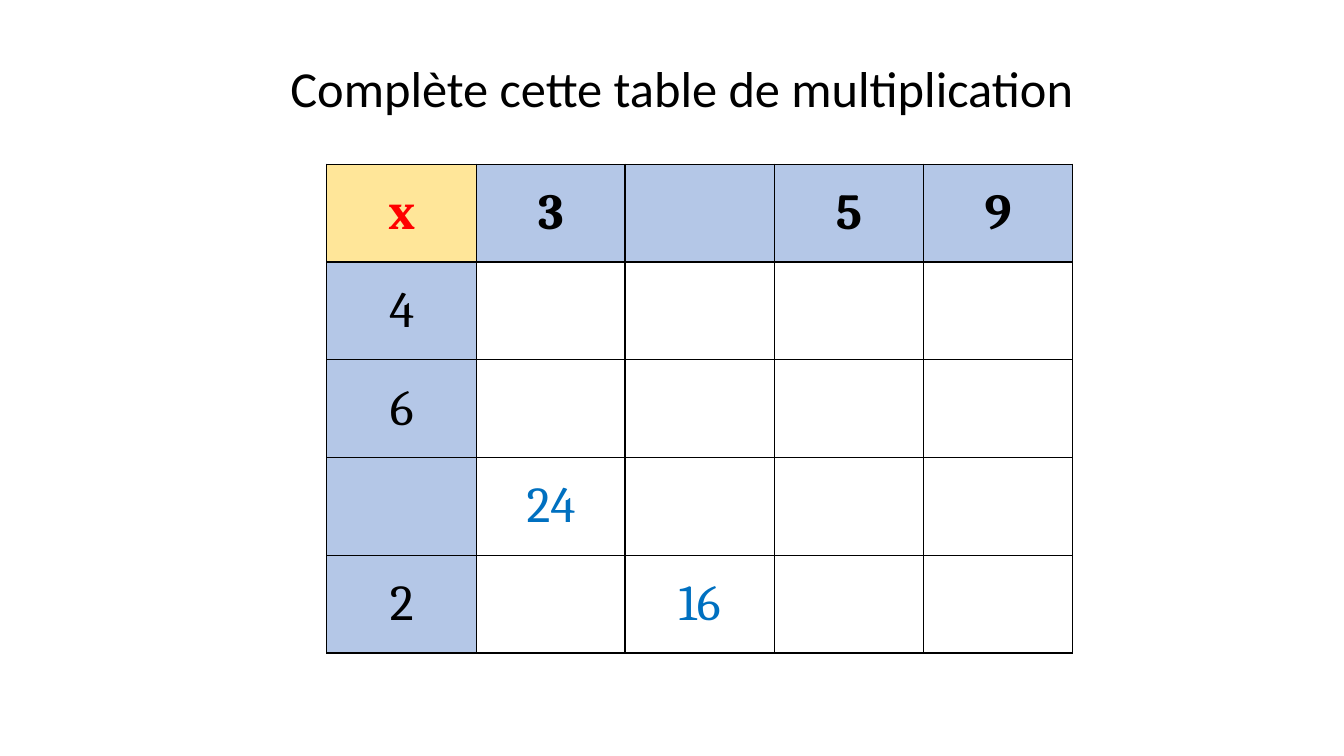
from lxml import etree
from pptx import Presentation
from pptx.dml.color import RGBColor
from pptx.enum import text
from pptx.oxml.ns import qn
from pptx.util import Inches, Pt

TITLE = "Complète cette table de multiplication"
GRID = [
    ["x", "3", "", "5", "9"],
    ["4", "", "", "", ""],
    ["6", "", "", "", ""],
    ["", "24", "", "", ""],
    ["2", "", "16", "", ""],
]
COLUMN_WIDTHS = [1.49, 1.47, 1.48, 1.48, 1.48]
ROW_HEIGHT = 0.97
BLACK, RED, BLUE = "000000", "FF0000", "0070C0"
CORNER_FILL, HEADER_FILL = "FFE699", "B4C7E7"


def rgb(value):
    return RGBColor.from_string(value)


def set_font(paragraph, name, color, bold=False):
    font = paragraph.font
    font.name, font.size, font.bold = name, Pt(36), bold
    font.color.rgb = rgb(color)


def add_borders(cell):
    properties = cell._tc.get_or_add_tcPr()
    for position, side in enumerate(("a:lnL", "a:lnR", "a:lnT", "a:lnB")):
        line = etree.Element(qn(side), w=str(Pt(1)))
        fill = etree.SubElement(line, qn("a:solidFill"))
        etree.SubElement(fill, qn("a:srgbClr"), val=BLACK)
        properties.insert(position, line)


def cell_style(row, column):
    """Return the fill (None for an answer cell) and the text colour."""
    if row == column == 0:
        return CORNER_FILL, RED
    if row == 0 or column == 0:
        return HEADER_FILL, BLACK
    return None, BLUE


prs = Presentation()
prs.slide_width, prs.slide_height = Inches(13.33), Inches(7.5)
slide = prs.slides.add_slide(prs.slide_layouts[5])

title = slide.shapes.title
title.left, title.top = Inches(2.78), Inches(0.52)
title.width, title.height = Inches(9.32), Inches(0.71)
title.text_frame.text = TITLE
title.text_frame.word_wrap = True
title.text_frame.auto_size = text.MSO_AUTO_SIZE.NONE
title.text_frame.vertical_anchor = text.MSO_ANCHOR.TOP
heading = title.text_frame.paragraphs[0]
heading.alignment = text.PP_ALIGN.LEFT
set_font(heading, "Calibri", BLACK)

table = slide.shapes.add_table(
    len(GRID), len(COLUMN_WIDTHS), Inches(3.24), Inches(1.63),
    Inches(sum(COLUMN_WIDTHS)), Inches(ROW_HEIGHT * len(GRID))).table
table.horz_banding = False
for column, width in zip(table.columns, COLUMN_WIDTHS):
    column.width = Inches(width)

for r, numbers in enumerate(GRID):
    table.rows[r].height = Inches(ROW_HEIGHT)
    for c, number in enumerate(numbers):
        cell = table.cell(r, c)
        fill, color = cell_style(r, c)
        if fill:
            cell.fill.solid()
            cell.fill.fore_color.rgb = rgb(fill)
        else:
            cell.fill.background()
        add_borders(cell)
        cell.vertical_anchor = text.MSO_ANCHOR.MIDDLE
        cell.text = number
        paragraph = cell.text_frame.paragraphs[0]
        paragraph.alignment = text.PP_ALIGN.CENTER
        set_font(paragraph, "Cambria", color, bold=r == 0)

prs.save("out.pptx")
